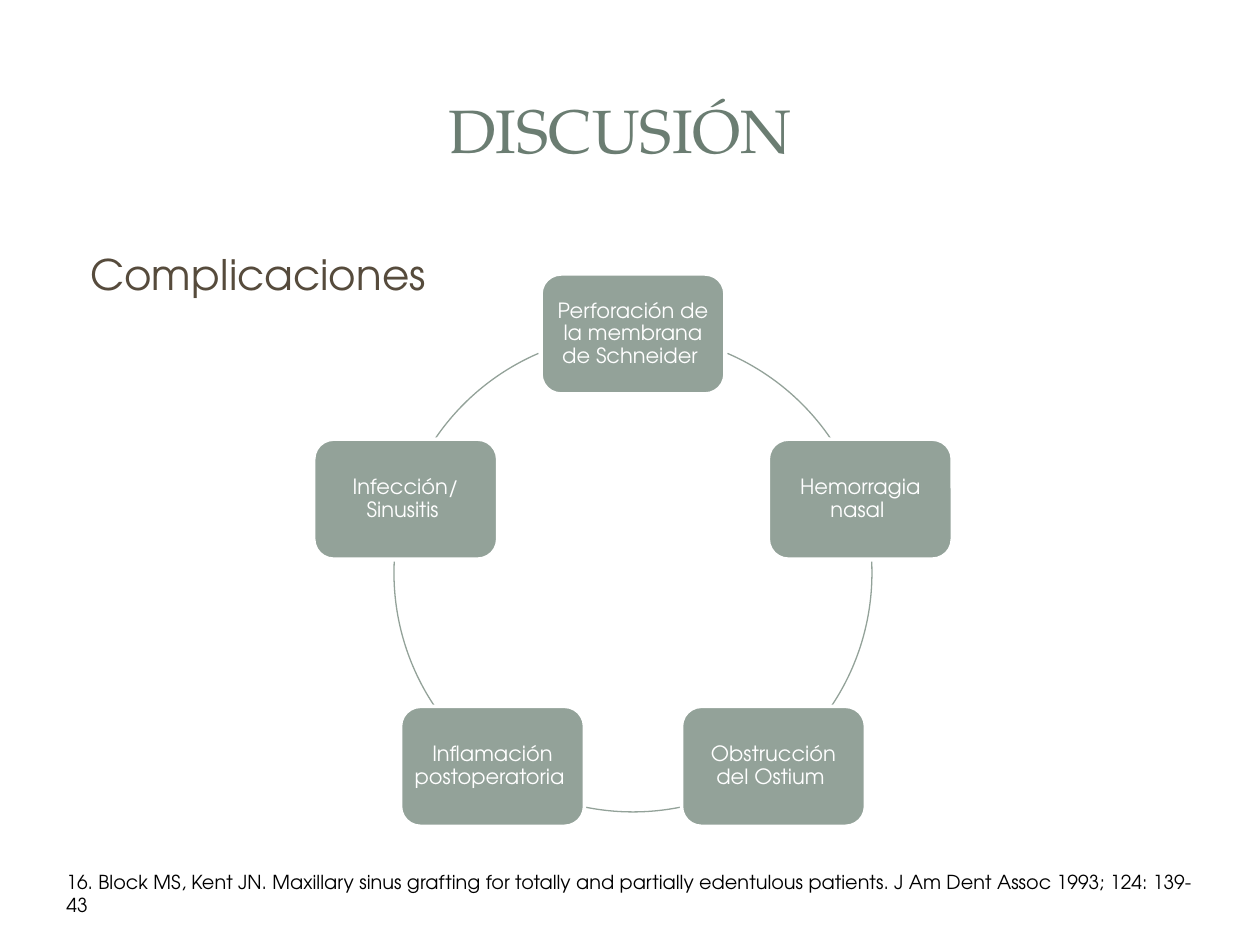
import math

import pptx
import pptx.dml.color
import pptx.enum.shapes
import pptx.enum.text
import pptx.util

PX = 914400 / 126
WHITE = pptx.dml.color.RGBColor(0xFF, 0xFF, 0xFF)
SAGE = pptx.dml.color.RGBColor(0x93, 0xA2, 0x99)
GREEN = pptx.dml.color.RGBColor(0x6B, 0x7D, 0x72)
BROWN = pptx.dml.color.RGBColor(0x56, 0x4B, 0x3C)
BLACK = pptx.dml.color.RGBColor(0x00, 0x00, 0x00)
SANS = "TeX Gyre Adventor"
SERIF = "TeX Gyre Pagella"
MIDDLE = pptx.enum.text.MSO_ANCHOR.MIDDLE
TOP = pptx.enum.text.MSO_ANCHOR.TOP
CENTER = pptx.enum.text.PP_ALIGN.CENTER
LEFT = pptx.enum.text.PP_ALIGN.LEFT
SHAPE = pptx.enum.shapes.MSO_SHAPE

COMPLICATIONS = [
    "Perforación de la membrana de Schneider ",
    "Hemorragia nasal ",
    "Obstrucción del Ostium ",
    "Inflamación postoperatoria ",
    "Infección/ Sinusitis ",
]
ARC_ANGLES = [(293.3, 326), (357.3, 33.9), (78.4, 101.6), (146.1, 182.7), (214, 246.7)]
REFERENCE = (
    "16. Block MS, Kent JN. Maxillary sinus grafting for totally and partially "
    "edentulous patients. J Am Dent Assoc 1993; 124: 139-43"
)


def emu(*lengths):
    """Turn px lengths into a list of EMU."""
    return [pptx.util.Emu(round(length * PX)) for length in lengths]


def set_all(target, values):
    """Set each attribute of the target from a dict."""
    for name, value in values.items():
        setattr(target, name, value)


def write(shape, text, font, size, color, align=LEFT, anchor=TOP, paragraph_format=None):
    """Put one formatted paragraph into a shape and return it."""
    set_all(shape.text_frame, {"word_wrap": True, "vertical_anchor": anchor})
    paragraph = shape.text_frame.paragraphs[0]
    set_all(paragraph, {"alignment": align, **(paragraph_format or {})})
    run = paragraph.add_run()
    run.text = text
    set_all(run.font, {"name": font, "size": pptx.util.Pt(size), "bold": False})
    run.font.color.rgb = color
    return paragraph


def add_heading(slide, box):
    """Move and fill the title placeholder."""
    title = slide.shapes.title
    set_all(title, dict(zip(("left", "top", "width", "height"), emu(*box))))
    write(title, "DISCUSIÓN ", SERIF, 35, GREEN, CENTER, MIDDLE)


def add_topic(slide, box):
    """Write the topic line above the cycle."""
    topic = slide.shapes.add_textbox(*emu(*box))
    spacing = {"space_before": pptx.util.Pt(4.8)}
    paragraph = write(topic, "Complicaciones", SANS, 24, BROWN, paragraph_format=spacing)
    properties = paragraph._p.get_or_add_pPr()
    properties.set("marL", str(emu(15)[0]))
    properties.set("indent", "0")


def add_arc(slide, box, start, end):
    """Draw one arc of the ring between two angles in degrees."""
    arc = slide.shapes.add_shape(SHAPE.ARC, *emu(*box))
    arc.shadow.inherit = False
    arc.adjustments[0], arc.adjustments[1] = start * 0.6, end * 0.6
    arc.fill.background()
    arc.line.color.rgb = SAGE
    arc.line.width = pptx.util.Pt(0.75)


def add_complication(slide, box, text):
    """Draw one rounded node of the cycle with its label."""
    node = slide.shapes.add_shape(SHAPE.ROUNDED_RECTANGLE, *emu(*box))
    node.shadow.inherit = False
    node.fill.solid()
    node.fill.fore_color.rgb = SAGE
    node.line.color.rgb = WHITE
    node.line.width = pptx.util.Pt(2)
    sides = ("margin_left", "margin_top", "margin_right", "margin_bottom")
    set_all(node.text_frame, dict.fromkeys(sides, emu(6)[0]))
    write(node, text, SANS, 12, WHITE, CENTER, MIDDLE, {"line_spacing": 0.9})


def add_cycle(slide, box, node_width=184, node_height=120):
    """Spread the complications evenly round the circle inscribed in the box."""
    left, top, width, height = box
    for start, end in ARC_ANGLES:
        add_arc(slide, box, start, end)
    for index, text in enumerate(COMPLICATIONS):
        angle = math.tau * index / len(COMPLICATIONS) - math.pi / 2
        center_x = left + width / 2 * (1 + math.cos(angle))
        center_y = top + height / 2 * (1 + math.sin(angle))
        node_box = (center_x - node_width / 2, center_y - node_height / 2, node_width, node_height)
        add_complication(slide, node_box, text)


def add_reference(slide, box):
    """Write the cited source at the foot."""
    reference = slide.shapes.add_textbox(*emu(*box))
    write(reference, REFERENCE, SANS, 11, BLACK)


def main():
    """Build the slide and save it."""
    deck = pptx.Presentation()
    deck.slide_width, deck.slide_height = emu(1260, 945)
    slide = deck.slides.add_slide(deck.slide_layouts[5])
    add_heading(slide, (59, 57, 1138, 144))
    add_cycle(slide, (394, 334, 478, 478))
    add_topic(slide, (63, 242, 1134, 602))
    add_reference(slide, (54, 864, 1171, 74))
    deck.save("out.pptx")


if __name__ == "__main__":
    main()
